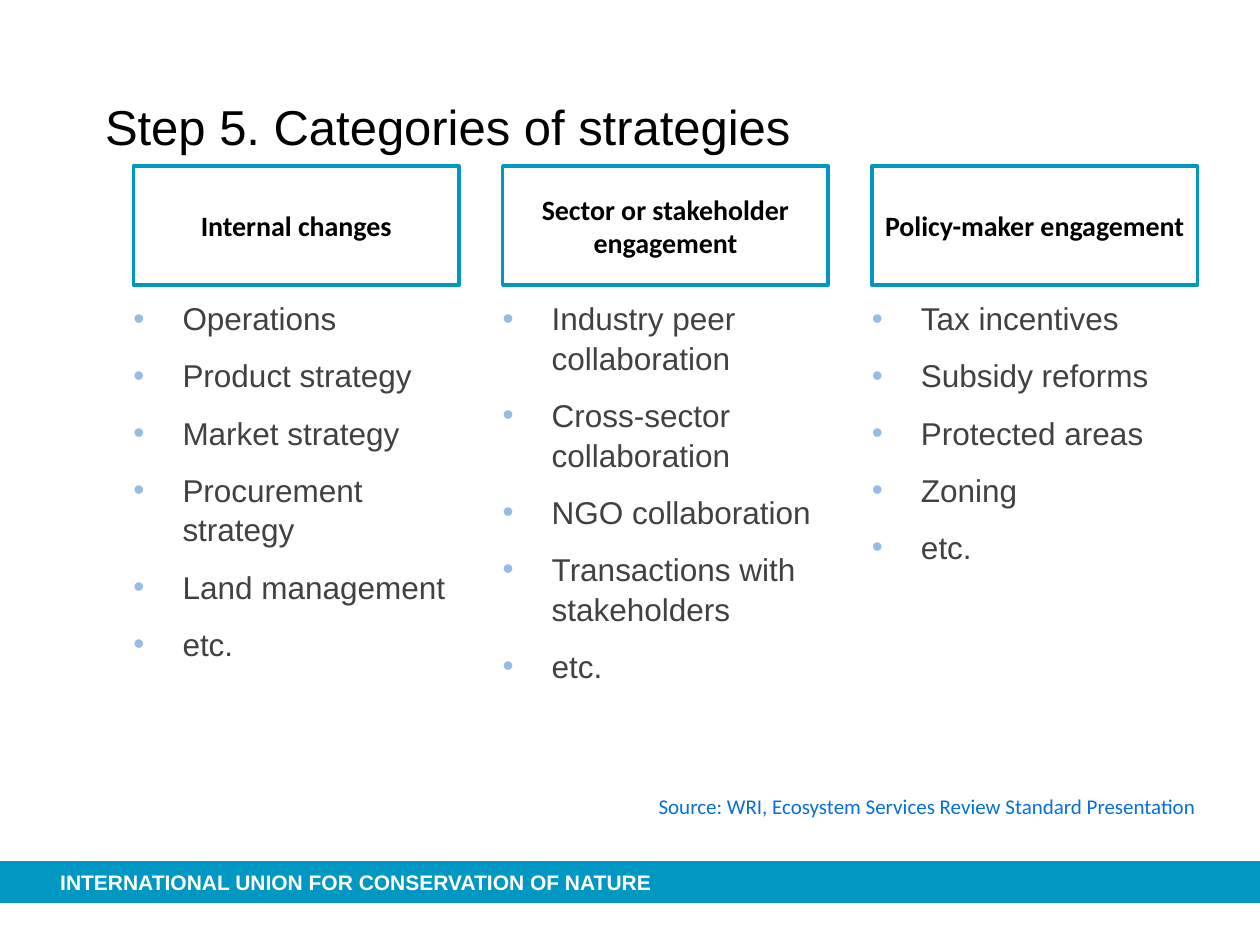
from dataclasses import dataclass

import lxml.etree
import pptx
import pptx.dml.color
import pptx.enum.shapes
import pptx.enum.text
import pptx.oxml.ns
import pptx.util

Pt = pptx.util.Pt
Align = pptx.enum.text.PP_ALIGN
Anchor = pptx.enum.text.MSO_ANCHOR

BLUE = "0098C3"
WHITE = "FFFFFF"
BLACK = "000000"
COLUMN_LEFT = 76.3
COLUMN_STEP = 211
COLUMN_WIDTH = 186
INDENT = 28


@dataclass
class Category:
    heading: str
    strategies: list[str]
    list_height: float


CATEGORIES = [
    Category(
        "Internal changes",
        ["Operations", "Product strategy", "Market strategy",
         "Procurement strategy", "Land management", "etc."],
        208,
    ),
    Category(
        "Sector or stakeholder engagement",
        ["Industry peer collaboration", "Cross-sector collaboration",
         "NGO collaboration", "Transactions with stakeholders", "etc."],
        219,
    ),
    Category(
        "Policy-maker engagement",
        ["Tax incentives", "Subsidy reforms", "Protected areas", "Zoning", "etc."],
        153,
    ),
]


def color(value: str) -> pptx.dml.color.RGBColor:
    return pptx.dml.color.RGBColor.from_string(value)


def write(para, text: str, *, size: float, font: str = "Arial", fill: str = BLACK,
          bold: bool = False, align=Align.LEFT) -> None:
    para.alignment = align
    span = para.add_run()
    span.text = text
    span.font.size = Pt(size)
    span.font.name = font
    span.font.bold = bold
    span.font.color.rgb = color(fill)


def prepare_frame(box, *, anchor=Anchor.TOP, inset: bool = False):
    frame = box.text_frame
    frame.word_wrap = True
    frame.auto_size = pptx.enum.text.MSO_AUTO_SIZE.NONE
    frame.vertical_anchor = anchor
    if not inset:
        frame.margin_left = frame.margin_right = Pt(0)
        frame.margin_top = frame.margin_bottom = Pt(0)
    return frame


def add_text(page, left: float, top: float, width: float, height: float, *,
             anchor=Anchor.TOP):
    box = page.shapes.add_textbox(Pt(left), Pt(top), Pt(width), Pt(height))
    return prepare_frame(box, anchor=anchor)


def add_rectangle(page, left: float, top: float, width: float, height: float, *,
                  fill: str, line: str | None = None):
    box = page.shapes.add_shape(
        pptx.enum.shapes.MSO_SHAPE.RECTANGLE, Pt(left), Pt(top), Pt(width), Pt(height))
    box.shadow.inherit = False
    box.fill.solid()
    box.fill.fore_color.rgb = color(fill)
    if line:
        box.line.color.rgb = color(line)
        box.line.width = Pt(2)
    else:
        box.line.fill.background()
    return box


def add_bullet(para) -> None:
    qn = pptx.oxml.ns.qn
    properties = para._p.get_or_add_pPr()
    properties.set("marL", str(Pt(INDENT)))
    properties.set("indent", str(-Pt(INDENT)))
    bullet_color = lxml.etree.SubElement(properties, qn("a:buClr"))
    lxml.etree.SubElement(bullet_color, qn("a:srgbClr"), val="98BBE5")
    lxml.etree.SubElement(properties, qn("a:buFont"), typeface="Arial")
    lxml.etree.SubElement(properties, qn("a:buChar"), char="•")


def add_category(page, category: Category, left: float) -> None:
    box = add_rectangle(page, left, 95, COLUMN_WIDTH, 68, fill=WHITE, line=BLUE)
    frame = prepare_frame(box, anchor=Anchor.MIDDLE, inset=True)
    write(frame.paragraphs[0], category.heading, size=16, font="Calibri",
          bold=True, align=Align.CENTER)

    frame = add_text(page, left, 170, COLUMN_WIDTH, category.list_height)
    for index, strategy in enumerate(category.strategies):
        para = frame.add_paragraph() if index else frame.paragraphs[0]
        add_bullet(para)
        para.line_spacing = 1.05
        para.space_before = Pt(5 if index else 0)
        para.space_after = Pt(5)
        write(para, strategy, size=18, fill="414042")


def main() -> None:
    deck = pptx.Presentation()
    deck.slide_width, deck.slide_height = Pt(720), Pt(540)
    page = deck.slides.add_slide(deck.slide_layouts[5])

    add_rectangle(page, 0, 492, 720, 24, fill=BLUE)
    footer = add_text(page, 34.4, 496.8, 403, 14.4, anchor=Anchor.MIDDLE)
    write(footer.paragraphs[0], "INTERNATIONAL UNION FOR CONSERVATION OF NATURE",
          size=12, fill=WHITE, bold=True)

    title = page.shapes.title
    title.left, title.top, title.width, title.height = Pt(60), Pt(55), Pt(619), Pt(63)
    write(prepare_frame(title).paragraphs[0], "Step 5. Categories of strategies", size=28)

    for index, category in enumerate(CATEGORIES):
        add_category(page, category, COLUMN_LEFT + index * COLUMN_STEP)

    source = add_text(page, COLUMN_LEFT, 453.6, 607, 14.4)
    write(source.paragraphs[0],
          "Source: WRI, Ecosystem Services Review Standard Presentation",
          size=12, font="Calibri", fill="046FDE", align=Align.RIGHT)

    deck.save("out.pptx")


if __name__ == "__main__":
    main()
